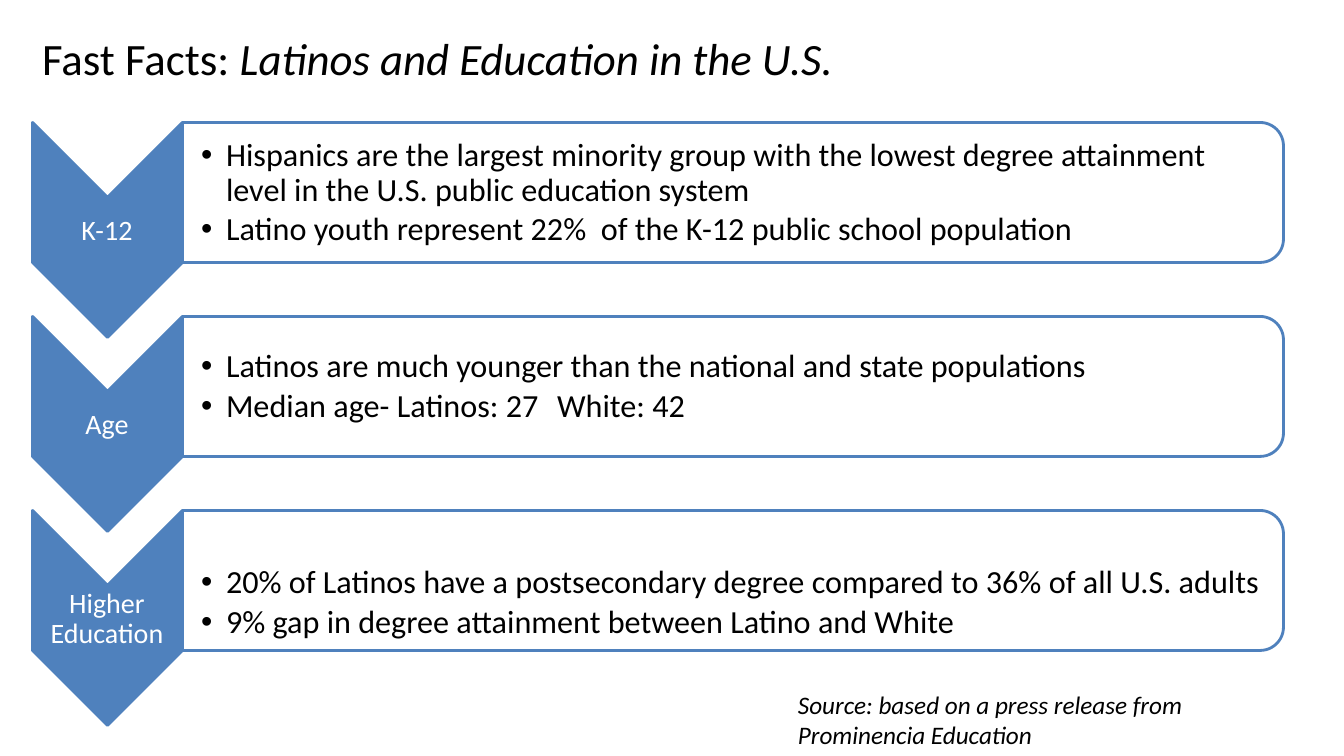
from lxml.etree import SubElement
from pptx import Presentation
from pptx.dml.color import RGBColor
from pptx.enum.shapes import MSO_SHAPE
from pptx.enum.text import MSO_ANCHOR, MSO_AUTO_SIZE, PP_ALIGN
from pptx.oxml.ns import qn
from pptx.util import Emu, Pt

BLUE = RGBColor(0x4F, 0x81, 0xBD)
WHITE = RGBColor(0xFF, 0xFF, 0xFF)
BLACK = RGBColor(0x00, 0x00, 0x00)

SLIDE_WIDTH, SLIDE_HEIGHT = 1344, 756
ROW_STEP = 194
BULLET_INDENT = 25
SECOND_GROUP_TAB = 356

# Label, facts, and how far the facts sit below the middle of their bar
TOPICS = [
    ("K-12", [
        "Hispanics are the largest minority group with the lowest degree "
        "attainment level in the U.S. public education system",
        "Latino youth represent 22%  of the K-12 public school population",
    ], 0),
    ("Age", [
        "Latinos are much younger than the national and state populations",
        "Median age- Latinos: 27\tWhite: 42",
    ], 0),
    ("Higher Education", [
        "20% of Latinos have a postsecondary degree compared to 36% of all U.S. adults",
        "9% gap in degree attainment between Latino and White",
    ], 22),
]


def px(length):
    """Turn pixels into EMU at 100.8 px to the inch."""
    return Emu(round(length * 914400 / 100.8))


def add_text(paragraph, text, size, color=BLACK, italic=False, font="Calibri"):
    run = paragraph.add_run()
    run.text = text
    run.font.name = font
    run.font.size = Pt(size)
    run.font.color.rgb = color
    run.font.italic = italic


def add_bullet(paragraph):
    properties = paragraph._p.get_or_add_pPr()
    properties.set("marL", str(px(BULLET_INDENT)))
    properties.set("indent", str(-px(BULLET_INDENT)))
    SubElement(properties, qn("a:buFont"), typeface="Arial")
    SubElement(properties, qn("a:buChar"), char="•")
    tabs = SubElement(properties, qn("a:tabLst"))
    SubElement(tabs, qn("a:tab"), pos=str(px(SECOND_GROUP_TAB)), algn="l")


class FactSlide:
    def __init__(self, presentation):
        self.slide = presentation.slides.add_slide(presentation.slide_layouts[5])
        self.shapes = self.slide.shapes

    def title(self, left, top, width, height, lead, subject):
        title = self.shapes.title
        title.left, title.top = px(left), px(top)
        title.width, title.height = px(width), px(height)
        frame = title.text_frame
        frame.auto_size = MSO_AUTO_SIZE.NONE
        frame.vertical_anchor = MSO_ANCHOR.TOP
        heading = frame.paragraphs[0]
        heading.alignment = PP_ALIGN.LEFT
        add_text(heading, lead, 32)
        add_text(heading, subject, 32, italic=True)

    def turned_shape(self, kind, left, top, width, height, fill, opacity=100):
        """Add a blue-edged shape turned a quarter clockwise."""
        shape = self.shapes.add_shape(kind, px(left), px(top), px(width), px(height))
        shape.rotation = 90
        shape.shadow.inherit = False
        shape.fill.solid()
        shape.fill.fore_color.rgb = fill
        shape.line.color.rgb = BLUE
        shape.line.width = Pt(2)
        if opacity < 100:
            color = shape._element.spPr.find(qn("a:solidFill"))[0]
            SubElement(color, qn("a:alpha"), val=str(opacity * 1000))

    def text_frame(self, left, top, width, height, insets=(10, 5, 10, 5),
                   anchor=MSO_ANCHOR.TOP):
        box = self.shapes.add_textbox(px(left), px(top), px(width), px(height))
        frame = box.text_frame
        frame.word_wrap = True
        frame.vertical_anchor = anchor
        (frame.margin_left, frame.margin_top,
         frame.margin_right, frame.margin_bottom) = map(px, insets)
        return frame

    def label(self, top, text):
        frame = self.text_frame(32, top, 150, 65, (1, 1, 1, 1), MSO_ANCHOR.MIDDLE)
        paragraph = frame.paragraphs[0]
        paragraph.alignment = PP_ALIGN.CENTER
        paragraph.line_spacing = 0.9
        add_text(paragraph, text, 20, WHITE)

    def facts(self, top, facts):
        frame = self.text_frame(183, top, 1094, 126, (18, 2, 2, 2), MSO_ANCHOR.MIDDLE)
        for index, fact in enumerate(facts):
            paragraph = frame.add_paragraph() if index else frame.paragraphs[0]
            paragraph.line_spacing = 0.9
            paragraph.space_after = Pt(3.5)
            add_bullet(paragraph)
            add_text(paragraph, fact, 23)

    def topic(self, offset, label, facts, drop):
        self.turned_shape(MSO_SHAPE.CHEVRON, 0, 155 + offset, 215, 150, BLUE)
        self.label(199 + offset, label)
        self.turned_shape(MSO_SHAPE.ROUND_2_SAME_RECTANGLE,
                          663, -358 + offset, 140, 1101, WHITE, opacity=90)
        self.facts(130 + offset + drop, facts)

    def source(self, left, top, width, height, text):
        frame = self.text_frame(left, top, width, height)
        add_text(frame.paragraphs[0], text, 18, italic=True)


def main():
    presentation = Presentation()
    presentation.slide_width = px(SLIDE_WIDTH)
    presentation.slide_height = px(SLIDE_HEIGHT)
    fast_facts = FactSlide(presentation)

    # Heading
    fast_facts.title(32, 26, 1252, 65, "Fast Facts: ", "Latinos and Education in the U.S.")

    # One chevron and bar per topic
    for row, (label, facts, drop) in enumerate(TOPICS):
        fast_facts.topic(row * ROW_STEP, label, facts, drop)

    # Source line
    fast_facts.source(788, 684, 519, 72,
                      "Source: based on a press release from Prominencia Education")

    presentation.save("out.pptx")


if __name__ == "__main__":
    main()
